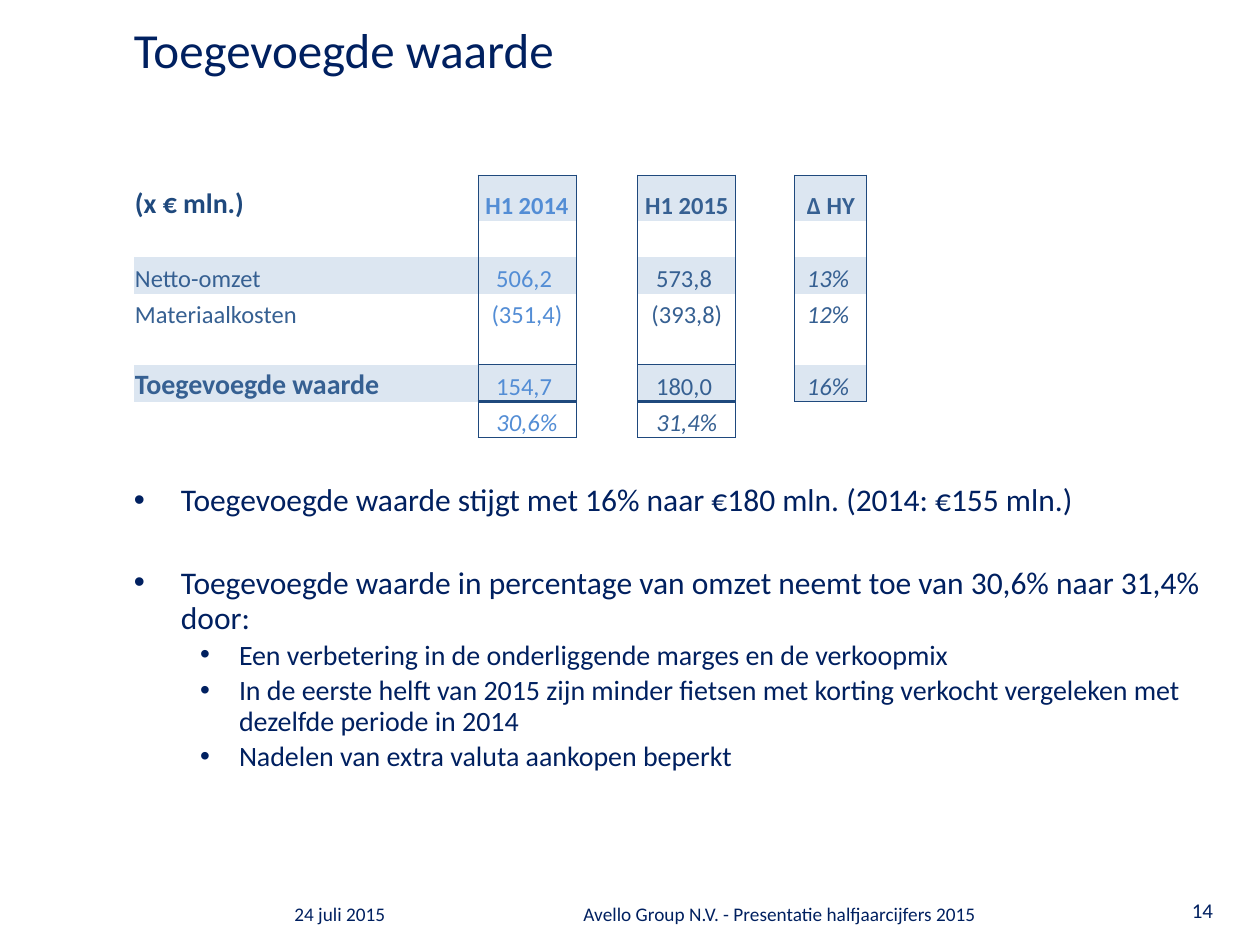
from lxml.etree import SubElement
from pptx import Presentation
from pptx.dml.color import RGBColor
from pptx.enum.text import MSO_ANCHOR as ANCHOR, PP_ALIGN as ALIGN
from pptx.oxml.ns import qn
from pptx.util import Emu, Pt

PX = 914400 / 126
NAVY = RGBColor(0x00, 0x20, 0x60)
BORDER = RGBColor(0x1F, 0x49, 0x7D)
DARK = RGBColor(0x36, 0x60, 0x92)
LIGHT = RGBColor(0x53, 0x8D, 0xD5)
BAND = RGBColor(0xDC, 0xE6, 0xF1)
WHITE = RGBColor(0xFF, 0xFF, 0xFF)
NO_STYLE = "{2D5ABB26-0587-4C30-8999-92F81FD0307C}"


def px(n):
    return Emu(round(n * PX))


def write(p, text, size=18, color=NAVY, bold=False, italic=False, align=None,
          line=None, before=None, level=0, bullet=None):
    """Fill paragraph p; bullet is (text indent, hanging width) in px."""
    if bullet:
        pPr = p._p.get_or_add_pPr()
        pPr.set("marL", str(px(bullet[0])))
        pPr.set("indent", str(-px(bullet[1])))
        SubElement(pPr, qn("a:buFont"), typeface="Arial")
        SubElement(pPr, qn("a:buChar"), char="•")
    if level:
        p.level = level
    if align is not None:
        p.alignment = align
    if line is not None:
        p.line_spacing = line
    if before is not None:
        p.space_before = Pt(before)
    r = p.add_run()
    r.text = text
    r.font.name = "Calibri"
    r.font.size = Pt(size)
    r.font.bold = bold
    r.font.italic = italic
    r.font.color.rgb = color


class Deck:
    def __init__(self, width, height):
        self.prs = Presentation()
        self.prs.slide_width, self.prs.slide_height = px(width), px(height)
        self.s = self.prs.slides.add_slide(self.prs.slide_layouts[6])

    def text(self, x, y, w, h, paragraphs, inset=True):
        tf = self.s.shapes.add_textbox(px(x), px(y), px(w), px(h)).text_frame
        tf.word_wrap = True
        if not inset:
            tf.margin_left = tf.margin_right = tf.margin_top = tf.margin_bottom = 0
        for i, (text, fmt) in enumerate(paragraphs):
            write(tf.add_paragraph() if i else tf.paragraphs[0], text, **fmt)

    def table(self, x, y, cols, rows):
        sp = self.s.shapes.add_table(len(rows), len(cols), px(x), px(y),
                                     px(sum(cols)), px(sum(rows)))
        t = sp.table
        t.first_row = t.horz_banding = False
        t._tbl.tblPr.find(qn("a:tableStyleId")).text = NO_STYLE
        for col, w in zip(t.columns, cols):
            col.width = px(w)
        for row, h in zip(t.rows, rows):
            row.height = px(h)
        return t

    def cell(self, c, text, fill, edges, **fmt):
        c.margin_left = c.margin_right = c.margin_top = px(1)
        c.margin_bottom = 0
        c.vertical_anchor = ANCHOR.BOTTOM
        p = c.text_frame.paragraphs[0]
        if text:
            write(p, text, **fmt)
        else:
            SubElement(p._p, qn("a:endParaRPr"), sz="1400")
        for side in "LRTB":
            if side in edges:
                ln = SubElement(c._tc.get_or_add_tcPr(), qn("a:ln" + side),
                                w=str(Pt(edges[side])))
                paint = SubElement(ln, qn("a:solidFill"))
                SubElement(paint, qn("a:srgbClr"), val=str(BORDER))
        c.fill.solid()
        c.fill.fore_color.rgb = fill


# Table contents: label, H1 2014, H1 2015, change
FIGURES = [
    ("(x € mln.)", "H1 2014", "H1 2015", "∆ HY"),
    ("", "", "", ""),
    ("Netto-omzet", "506,2 ", "573,8 ", "13% "),
    ("Materiaalkosten", "(351,4)", "(393,8)", "12% "),
    ("", "", "", ""),
    ("Toegevoegde waarde", "154,7 ", "180,0 ", "16% "),
    ("", "30,6%", "31,4%", ""),
]
HEADER, TOTAL, SHARE = 0, 5, 6
BANDED = (HEADER, 2, TOTAL)
COL_2014, COL_2015, COL_CHANGE = 1, 3, 5


def edges_of(r, c):
    """Border widths in points: a box round each figure column."""
    if c not in (COL_2014, COL_2015, COL_CHANGE):
        return {}
    if c == COL_CHANGE and r == SHARE:
        return {"T": 0.5}
    edges = {"L": 0.5, "R": 0.5}
    if r == HEADER:
        edges["T"] = 0.5
    if c == COL_CHANGE:
        if r == TOTAL:
            edges["B"] = 0.5
    elif r == TOTAL:
        edges.update(T=0.5, B=2)
    elif r == SHARE:
        edges.update(T=2, B=0.5)
    return edges


def add_figures(deck):
    t = deck.table(134, 175, [344, 98, 62, 98, 59, 72],
                   [46, 36, 37, 36, 35, 37, 36])
    for r, (label, h1_2014, h1_2015, change) in enumerate(FIGURES):
        row = (label, h1_2014, "", h1_2015, "", change)
        for c, text in enumerate(row):
            is_label, is_gap = c == 0, c in (2, 4)
            banded = r in BANDED and not is_gap and (r, c) != (HEADER, 0)
            color = LIGHT if c == COL_2014 else DARK
            if (r, c) == (HEADER, 0):
                color = BORDER
            deck.cell(
                t.cell(r, c), text, BAND if banded else WHITE, edges_of(r, c),
                size=16 if is_label and r in (HEADER, TOTAL) else 14,
                color=color,
                bold=r == HEADER or (is_label and r == TOTAL),
                italic=r == SHARE or (c == COL_CHANGE and r != HEADER),
                align=ALIGN.LEFT if is_label else ALIGN.CENTER)


def main():
    deck = Deck(1260, 945)

    # Title
    deck.text(134, 26, 496, 118,
              [("Toegevoegde waarde", dict(size=28, line=Pt(30)))], inset=False)

    # Figures
    add_figures(deck)

    # Bullets
    main_point = dict(size=18, line=Pt(20), bullet=(47, 47))
    sub_point = dict(size=16, line=0.9, before=3.2, level=1, bullet=(105, 39))
    deck.text(134, 483, 1091, 397, [
        ("Toegevoegde waarde stijgt met 16% naar €180 mln. (2014: €155 mln.)",
         main_point),
        ("Toegevoegde waarde in percentage van omzet neemt toe van 30,6% naar "
         "31,4% door:", dict(main_point, before=27)),
        ("Een verbetering in de onderliggende marges en de verkoopmix", sub_point),
        ("In de eerste helft van 2015 zijn minder fietsen met korting verkocht "
         "vergeleken met dezelfde periode in 2014", sub_point),
        ("Nadelen van extra valuta aankopen beperkt", sub_point),
    ], inset=False)

    # Footer
    deck.text(282, 896, 213, 42, [("24 juli 2015", dict(size=11))])
    deck.text(571, 896, 576, 42,
              [("Avello Group N.V. - Presentatie halfjaarcijfers 2015",
                dict(size=11))])
    deck.text(1155, 891, 95, 47, [("14", dict(size=12, align=ALIGN.CENTER))])

    deck.prs.save("out.pptx")


if __name__ == "__main__":
    main()
